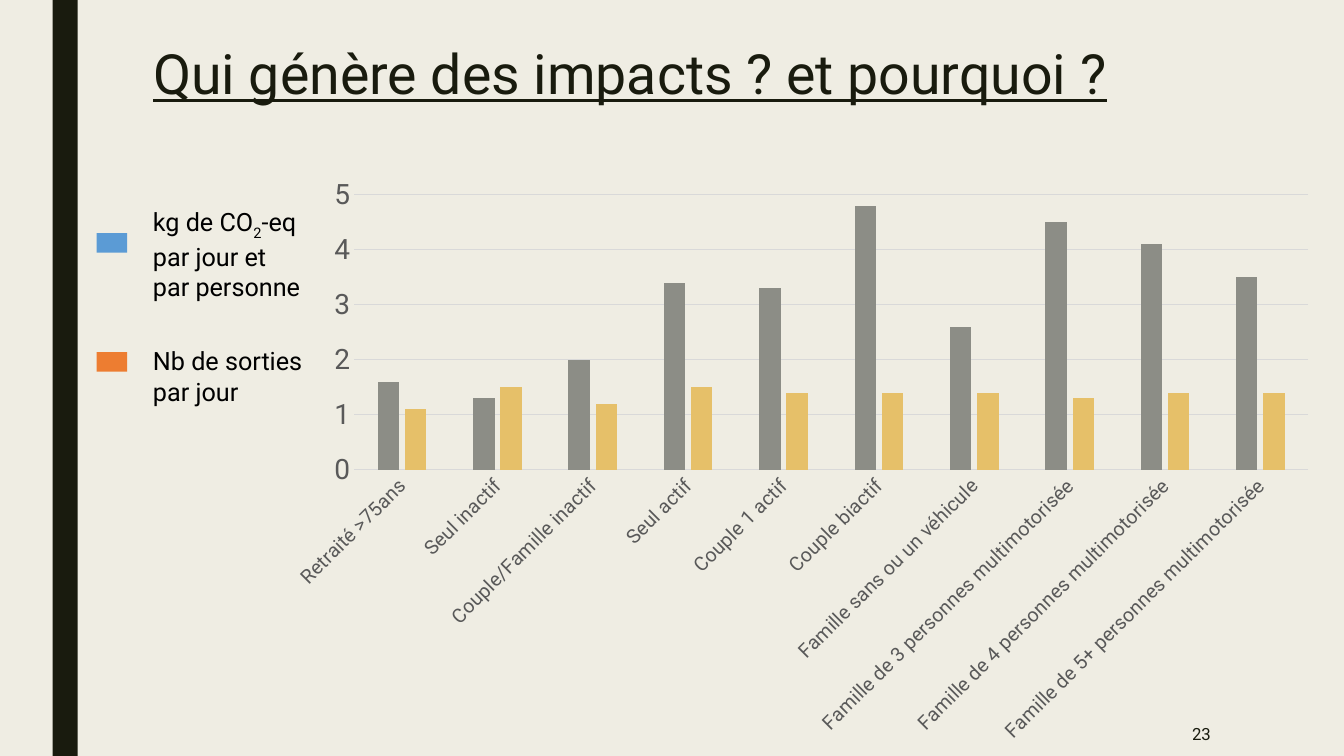
"""Build the slide on household travel impacts, with a clustered column chart."""
from pptx import Presentation
from pptx.chart.data import CategoryChartData
from pptx.dml.color import RGBColor
from pptx.enum import chart as charts, shapes, text
from pptx.oxml import parse_xml
from pptx.util import Pt

FONT = "Roboto"
CREAM = RGBColor(0xEF, 0xED, 0xE3)
INK = RGBColor(0x19, 0x1B, 0x0E)
BLACK = RGBColor(0, 0, 0)
LABEL = RGBColor(0x59, 0x59, 0x59)
GRID = RGBColor(0xD9, 0xD9, 0xD9)
BLUE = RGBColor(0x5B, 0x9B, 0xD5)
ORANGE = RGBColor(0xED, 0x7D, 0x31)
GREY = RGBColor(0x8C, 0x8D, 0x86)
GOLD = RGBColor(0xE6, 0xC0, 0x69)

TITLE = "Qui génère des impacts ? et pourquoi ?"
PAGE = "23"
HOUSEHOLDS = [
    ("Retraité >75ans", 1.6, 1.1),
    ("Seul inactif", 1.3, 1.5),
    ("Couple/Famille inactif", 2, 1.2),
    ("Seul actif", 3.4, 1.5),
    ("Couple 1 actif", 3.3, 1.4),
    ("Couple biactif", 4.8, 1.4),
    ("Famille sans ou un véhicule", 2.6, 1.4),
    ("Famille de 3 personnes multimotorisée", 4.5, 1.3),
    ("Famille de 4 personnes multimotorisée", 4.1, 1.4),
    ("Famille de 5+ personnes multimotorisée", 3.5, 1.4),
]
SERIES = [("Series 1", GREY), ("Series 2", GOLD)]
LEGEND = [
    (BLUE, 166.5, 144, 73, [("kg de CO", False), ("2", True), ("-eq par jour et par personne", False)]),
    (ORANGE, 251.5, 243.4, 51, [("Nb de sorties par jour", False)]),
]
PLOT = {"x": 0.086, "y": 0.045, "w": 0.9, "h": 0.468}


def style(font, size, color):
    font.name, font.size = FONT, Pt(size)
    font.color.rgb = color


def add_block(slide, left, top, width, height, color):
    block = slide.shapes.add_shape(
        shapes.MSO_SHAPE.RECTANGLE, Pt(left), Pt(top), Pt(width), Pt(height))
    block.shadow.inherit = False
    block.fill.solid()
    block.fill.fore_color.rgb = color
    block.line.fill.background()


def add_text(slide, left, top, width, height, runs, size, color):
    frame = slide.shapes.add_textbox(Pt(left), Pt(top), Pt(width), Pt(height)).text_frame
    frame.word_wrap = True
    paragraph = frame.paragraphs[0]
    for words, subscript in runs:
        run = paragraph.add_run()
        run.text = words
        if subscript:
            run.font._element.set("baseline", "-25000")
        style(run.font, size, color)
    return frame


def add_title(slide):
    title = slide.shapes.title
    title.left, title.top, title.width, title.height = Pt(102.2), Pt(28), Pt(756), Pt(42.5)
    frame = title.text_frame
    frame.text = TITLE
    frame.auto_size = text.MSO_AUTO_SIZE.NONE
    frame.vertical_anchor = text.MSO_ANCHOR.TOP
    frame.margin_top = Pt(6)
    paragraph = frame.paragraphs[0]
    paragraph.alignment = text.PP_ALIGN.LEFT
    paragraph.line_spacing = 0.89
    paragraph.font.underline = True
    style(paragraph.font, 39.6, INK)


def add_impact_chart(slide):
    data = CategoryChartData()
    names, *columns = zip(*HOUSEHOLDS)
    data.categories = names
    for (name, _), values in zip(SERIES, columns):
        data.add_series(name, values)
    chart = slide.shapes.add_chart(
        charts.XL_CHART_TYPE.COLUMN_CLUSTERED, Pt(188), Pt(120.2), Pt(757), Pt(420), data).chart
    chart.has_title = chart.has_legend = False
    style(chart.font, 10, BLACK)

    plot = chart.plots[0]
    plot.gap_width, plot.overlap, plot.vary_by_categories = 219, -27, False
    for series, (_, color) in zip(plot.series, SERIES):
        series.format.fill.solid()
        series.format.fill.fore_color.rgb = color

    for axis, size in [(chart.category_axis, 14), (chart.value_axis, 20)]:
        axis.major_tick_mark = axis.minor_tick_mark = charts.XL_TICK_MARK.NONE
        style(axis.tick_labels.font, size, LABEL)
    chart.category_axis._element.txPr.bodyPr.set("rot", "-2700000")
    values = chart.value_axis
    values.minimum_scale, values.maximum_scale, values.major_unit = 0, 5, 1
    values.has_major_gridlines = True
    values.format.line.fill.background()
    for line in (chart.category_axis.format.line, values.major_gridlines.format.line):
        line.color.rgb = GRID
        line.width = Pt(0.75)

    area = plot._element.getparent()
    for layout in area.findall("{*}layout"):
        area.remove(layout)
    places = "".join(f'<c:{key} val="{value}"/>' for key, value in PLOT.items())
    area.insert(0, parse_xml(
        '<c:layout xmlns:c="http://schemas.openxmlformats.org/drawingml/2006/chart">'
        '<c:manualLayout><c:layoutTarget val="inner"/><c:xMode val="edge"/>'
        f'<c:yMode val="edge"/>{places}</c:manualLayout></c:layout>'))


def main():
    presentation = Presentation()
    presentation.slide_width, presentation.slide_height = Pt(960), Pt(540)
    slide = presentation.slides.add_slide(presentation.slide_layouts[5])
    slide.background.fill.solid()
    slide.background.fill.fore_color.rgb = CREAM

    add_block(slide, 37.5, 0, 18, 540, INK)
    add_title(slide)
    number = add_text(slide, 746, 508.3, 126, 31.7, [(PAGE, False)], 12, INK)
    number.vertical_anchor = text.MSO_ANCHOR.MIDDLE
    number.paragraphs[0].alignment = text.PP_ALIGN.RIGHT
    add_impact_chart(slide)
    for color, key_top, text_top, height, runs in LEGEND:
        add_block(slide, 69, key_top, 21.8, 14, color)
        add_text(slide, 102.2, text_top, 125.3, height, runs, 18, BLACK)

    presentation.save("out.pptx")


if __name__ == "__main__":
    main()
